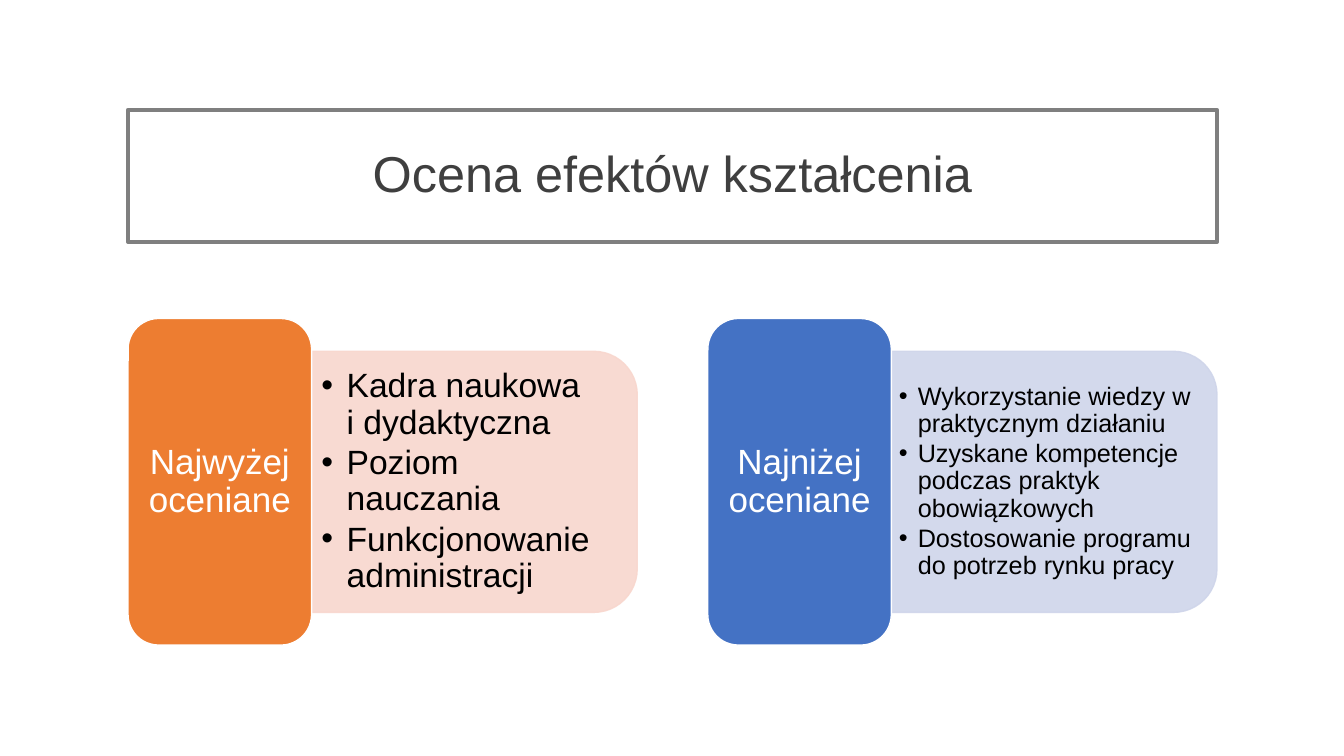
import pptx
import pptx.util
import pptx.dml.color
import pptx.enum.shapes
import pptx.enum.text
import pptx.oxml
import pptx.oxml.ns
import lxml.etree

Inches = pptx.util.Inches
Pt = pptx.util.Pt
Shapes = pptx.enum.shapes.MSO_SHAPE
Align = pptx.enum.text.PP_ALIGN
Anchor = pptx.enum.text.MSO_ANCHOR
qn = pptx.oxml.ns.qn

COLORS = {
    "white": "FFFFFF", "black": "000000", "title": "3F3F3F", "frame": "7F7F7F",
    "orange": "ED7D31", "peach": "F8D7CE", "blue": "4472C4", "lavender": "CFD5EA",
}
LEFT, PITCH = 1.27, 5.75
TAB_WIDTH, TAB_HEIGHT = 1.82, 3.24
PANEL_WIDTH, PANEL_HEIGHT = 3.23, 2.59
TEXT_WIDTH, TEXT_HEIGHT = 3.1, 2.34
MIDDLE = 4.78
OPACITY = 90
CARDS = [
    ("Najwyżej oceniane", "orange", "peach", 24,
     ["Kadra naukowa\vi dydaktyczna", "Poziom nauczania", "Funkcjonowanie administracji"]),
    ("Najniżej oceniane", "blue", "lavender", 18,
     ["Wykorzystanie wiedzy w praktycznym działaniu",
      "Uzyskane kompetencje podczas praktyk obowiązkowych",
      "Dostosowanie programu do potrzeb rynku pracy"]),
]


def color(name):
    return pptx.dml.color.RGBColor.from_string(COLORS[name])


def paint(shape, fill, line, width):
    shape.fill.solid()
    shape.fill.fore_color.rgb = color(fill)
    shape.line.color.rgb = color(line)
    shape.line.width = Pt(width)


def make_translucent(shape, percent):
    for tint in shape._element.spPr.iter(qn("a:srgbClr")):
        lxml.etree.SubElement(tint, qn("a:alpha")).set("val", str(percent * 1000))


def prepare_frame(shape, side):
    frame = shape.text_frame
    frame.word_wrap = True
    frame.auto_size = pptx.enum.text.MSO_AUTO_SIZE.NONE
    frame.vertical_anchor = Anchor.MIDDLE
    frame.margin_left = frame.margin_right = Inches(side)
    frame.margin_top = frame.margin_bottom = Inches(side / 2)
    return frame


def write(para, text, size, ink, align):
    para.text = text
    para.alignment = align
    para.line_spacing = 0.9
    para.font.name = "Arial"
    para.font.size = Pt(size)
    para.font.color.rgb = color(ink)


def add_bullet(para, indent):
    properties = para._p.get_or_add_pPr()
    properties.set("marL", str(Inches(indent)))
    properties.set("indent", str(-Inches(indent)))
    lxml.etree.SubElement(properties, qn("a:buFont")).set("typeface", "Arial")
    lxml.etree.SubElement(properties, qn("a:buChar")).set("char", "•")
    run_defaults = properties.find(qn("a:defRPr"))
    if run_defaults is not None:
        properties.append(run_defaults)


def add_title(page, text):
    title = page.shapes.title
    title.left, title.top = Inches(LEFT), Inches(1.09)
    title.width, title.height = Inches(10.8), Inches(1.31)
    paint(title, "white", "frame", 3)
    frame = prepare_frame(title, 0.1)
    write(frame.paragraphs[0], text, 36, "title", Align.CENTER)


def add_panel(group, left, tint):
    panel = group.shapes.add_shape(
        Shapes.ROUND_2_SAME_RECTANGLE,
        Inches(left + (PANEL_WIDTH - PANEL_HEIGHT) / 2), Inches(MIDDLE - PANEL_WIDTH / 2),
        Inches(PANEL_HEIGHT), Inches(PANEL_WIDTH))
    panel.rotation = 90
    panel.shadow.inherit = False
    paint(panel, tint, tint, 1)
    make_translucent(panel, OPACITY)


def add_bullets(group, left, size, items):
    box = group.shapes.add_textbox(
        Inches(left), Inches(MIDDLE - TEXT_HEIGHT / 2), Inches(TEXT_WIDTH), Inches(TEXT_HEIGHT))
    frame = prepare_frame(box, size / 240)
    for index, item in enumerate(items):
        para = frame.add_paragraph() if index else frame.paragraphs[0]
        write(para, item, size, "black", Align.LEFT)
        para.space_after = Pt(round(size * 0.12, 1))
        add_bullet(para, size / 96)


def add_tab(group, left, label, fill):
    tab = group.shapes.add_shape(
        Shapes.ROUNDED_RECTANGLE, Inches(left), Inches(MIDDLE - TAB_HEIGHT / 2),
        Inches(TAB_WIDTH), Inches(TAB_HEIGHT))
    tab.shadow.inherit = False
    paint(tab, fill, "white", 1)
    frame = prepare_frame(tab, 0.1)
    write(frame.paragraphs[0], label, 25, "white", Align.CENTER)


def add_card(page, left, label, fill, tint, size, items):
    group = page.shapes.add_group_shape()
    add_panel(group, left + TAB_WIDTH, tint)
    add_bullets(group, left + TAB_WIDTH, size, items)
    add_tab(group, left, label, fill)


def main():
    deck = pptx.Presentation()
    deck.slide_width, deck.slide_height = Inches(13.33), Inches(7.5)
    page = deck.slides.add_slide(deck.slide_layouts.get_by_name("Title Only"))
    add_title(page, "Ocena efektów kształcenia")
    for column, card in enumerate(CARDS):
        add_card(page, LEFT + column * PITCH, *card)
    deck.save("out.pptx")


if __name__ == "__main__":
    main()
